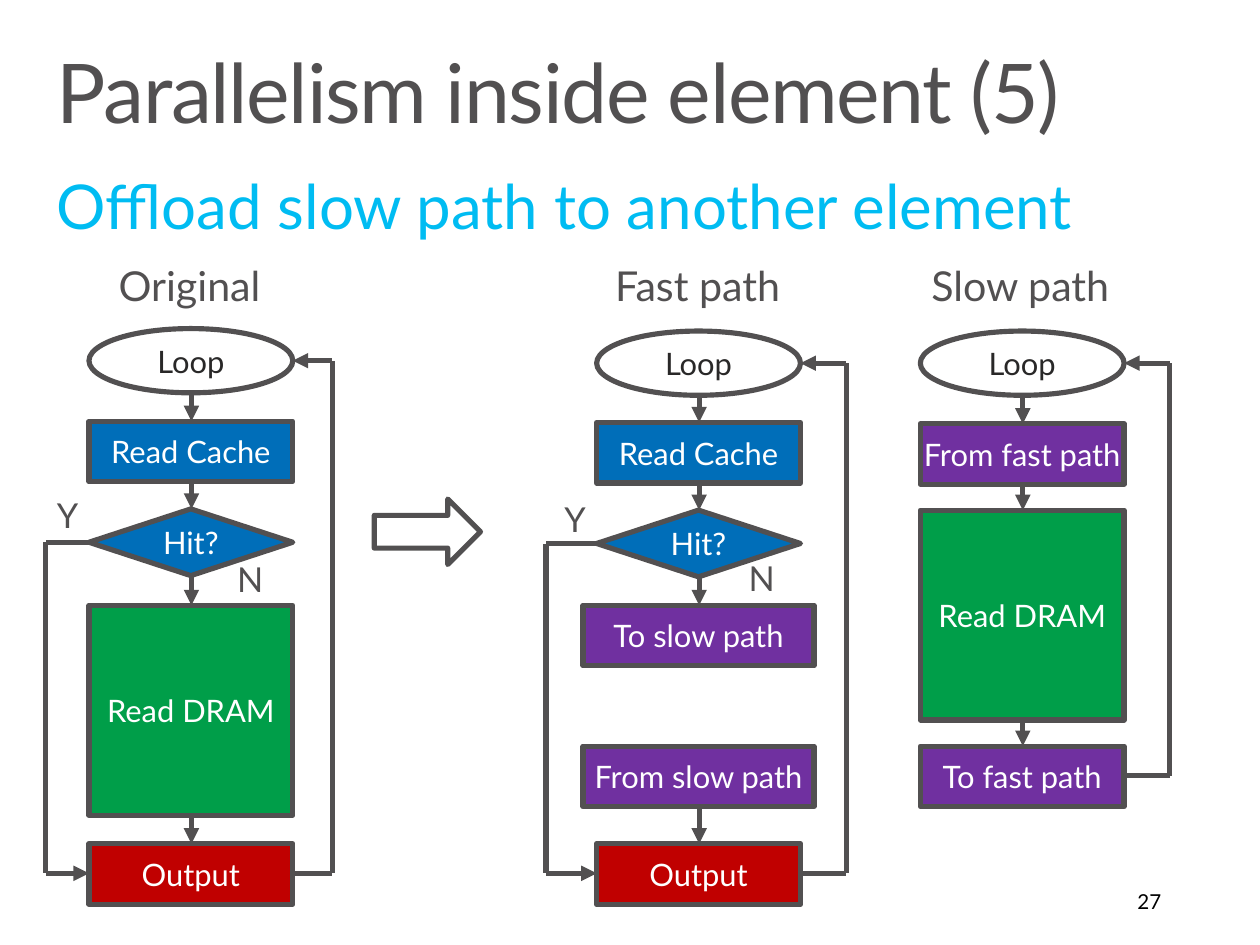
import dataclasses
import itertools

import lxml.etree
import pptx
import pptx.dml.color
import pptx.enum.shapes
import pptx.enum.text
import pptx.oxml.ns
import pptx.shapes.autoshape
import pptx.slide
import pptx.text.text
import pptx.util

EMU_PER_PX = 9144
FONT = "Lato"
GREY, CYAN, WHITE, BLACK = "525051", "00BCF2", "FFFFFF", "000000"
BLUE, GREEN, RED, PURPLE = "006EB9", "009E49", "C00000", "7030A0"
STEP_WIDTH, WIDE_STEP_WIDTH = 165, 187

Shape = pptx.enum.shapes.MSO_SHAPE
Align = pptx.enum.text.PP_ALIGN
Anchor = pptx.enum.text.MSO_ANCHOR
AutoSize = pptx.enum.text.MSO_AUTO_SIZE
Point = tuple[int, int]


@dataclasses.dataclass(frozen=True)
class Step:
    text: str
    top: int
    fill: str
    height: int = 49
    width: int = STEP_WIDTH
    outline: Shape = Shape.RECTANGLE
    color: str = WHITE
    linked: bool = True

    @property
    def middle(self) -> int:
        return self.top + self.height // 2


@dataclasses.dataclass(frozen=True)
class Flow:
    left: int
    return_x: int
    steps: list[Step]
    bypass_x: int | None = None


@dataclasses.dataclass(frozen=True)
class Label:
    text: str
    left: int
    top: int
    width: int
    height: int
    size: int


def loop(top: int) -> Step:
    return Step("Loop", top, WHITE, height=52, outline=Shape.OVAL, color="292828")


def hit(top: int) -> Step:
    return Step("Hit?", top, BLUE, height=54, outline=Shape.DIAMOND)


def dram(top: int) -> Step:
    return Step("Read DRAM", top, GREEN, height=170)


FLOWS = [
    Flow(72, 269, [
        loop(266),
        Step("Read Cache", 341, BLUE),
        hit(412),
        dram(490),
        Step("Output", 683, RED),
    ], bypass_x=37),
    Flow(483, 685, [
        loop(268),
        Step("Read Cache", 342, BLUE),
        hit(413),
        Step("To slow path", 490, PURPLE, width=WIDE_STEP_WIDTH, linked=False),
        Step("From slow path", 604, PURPLE, width=WIDE_STEP_WIDTH),
        Step("Output", 683, RED),
    ], bypass_x=442),
    Flow(745, 947, [
        loop(268),
        Step("From fast path", 343, PURPLE),
        dram(413),
        Step("To fast path", 604, PURPLE),
    ]),
]

LABELS = [
    Label("Original", 76, 199, 158, 69, 24),
    Label("Fast path", 478, 199, 175, 69, 24),
    Label("Slow path", 734, 199, 187, 69, 24),
    Label("Y", 26, 389, 56, 63, 20),
    Label("N", 172, 441, 61, 63, 20),
    Label("Y", 437, 392, 56, 63, 20),
    Label("N", 586, 440, 61, 63, 20),
]


def px(length: int) -> pptx.util.Emu:
    return pptx.util.Emu(length * EMU_PER_PX)


def rgb(color: str) -> pptx.dml.color.RGBColor:
    return pptx.dml.color.RGBColor.from_string(color)


def write_text(frame: pptx.text.text.TextFrame, text: str, *, size: int, color: str,
               align: Align = Align.LEFT, anchor: Anchor = Anchor.TOP,
               insets: Point = (10, 5), wrap: bool = True, auto_size: AutoSize = AutoSize.NONE,
               line_spacing: float = 1.0, before: int = 0, after: int = 0,
               tracking: int = 0) -> None:
    frame.auto_size = auto_size
    frame.word_wrap = wrap
    frame.vertical_anchor = anchor
    frame.margin_left = frame.margin_right = px(insets[0])
    frame.margin_top = frame.margin_bottom = px(insets[1])
    para = frame.paragraphs[0]
    para.alignment = align
    para.line_spacing = line_spacing
    para.space_before = pptx.util.Pt(before)
    para.space_after = pptx.util.Pt(after)
    span = para.add_run()
    span.text = text
    span.font.name = FONT
    span.font.size = pptx.util.Pt(size)
    span.font.color.rgb = rgb(color)
    if tracking:
        span.font._element.set("spc", str(tracking))


def place(shape: pptx.shapes.autoshape.Shape, left: int, top: int, width: int, height: int) -> None:
    shape.left, shape.top, shape.width, shape.height = map(px, (left, top, width, height))


def draw_shape(page: pptx.slide.Slide, outline: Shape, left: int, top: int, width: int,
               height: int, fill: str) -> pptx.shapes.autoshape.Shape:
    box = page.shapes.add_shape(outline, px(left), px(top), px(width), px(height))
    box.shadow.inherit = False
    box.fill.solid()
    box.fill.fore_color.rgb = rgb(fill)
    box.line.color.rgb = rgb(GREY)
    box.line.width = pptx.util.Pt(3)
    return box


def draw_route(page: pptx.slide.Slide, *points: Point) -> None:
    for start, end in itertools.pairwise(points):
        line = page.shapes.add_connector(
            pptx.enum.shapes.MSO_CONNECTOR.STRAIGHT, *map(px, start + end))
        line.line.color.rgb = rgb(GREY)
        line.line.width = pptx.util.Pt(3)
        properties = line.element.spPr
        if end == points[-1]:
            stroke = properties.find(pptx.oxml.ns.qn("a:ln"))
            lxml.etree.SubElement(stroke, pptx.oxml.ns.qn("a:tailEnd"), type="triangle")
        lxml.etree.SubElement(properties, pptx.oxml.ns.qn("a:effectLst"))


def draw_flow(page: pptx.slide.Slide, flow: Flow) -> None:
    for step in flow.steps:
        left = flow.left - (step.width - STEP_WIDTH) // 2
        box = draw_shape(page, step.outline, left, step.top, step.width, step.height, step.fill)
        write_text(box.text_frame, step.text, size=18, color=step.color, align=Align.CENTER,
                   anchor=Anchor.MIDDLE, insets=(0, 4))
    center = flow.left + (STEP_WIDTH + 1) // 2
    for upper, lower in itertools.pairwise(flow.steps):
        if upper.linked:
            draw_route(page, (center, upper.top + upper.height), (center, lower.top))
    right = flow.left + STEP_WIDTH
    first, last = flow.steps[0], flow.steps[-1]
    draw_route(page, (right, last.middle), (flow.return_x, last.middle),
               (flow.return_x, first.middle), (right, first.middle))
    if flow.bypass_x is not None:
        decision = flow.steps[2]
        draw_route(page, (flow.left, decision.middle), (flow.bypass_x, decision.middle),
                   (flow.bypass_x, last.middle), (flow.left, last.middle))


def draw_label(page: pptx.slide.Slide, label: Label) -> None:
    box = page.shapes.add_textbox(*map(px, (label.left, label.top, label.width, label.height)))
    write_text(box.text_frame, label.text, size=label.size, color=GREY, insets=(20, 16),
               wrap=False, auto_size=AutoSize.SHAPE_TO_FIT_TEXT, line_spacing=0.9, after=6)


def draw_headings(page: pptx.slide.Slide) -> None:
    title, body = page.shapes.title, page.placeholders[1]
    place(title, 30, 32, 960, 100)
    write_text(title.text_frame, "Parallelism inside element (5)", size=48, color=GREY,
               insets=(16, 10), line_spacing=0.9, tracking=-80)
    place(body, 30, 133, 960, 75)
    write_text(body.text_frame, "Offload slow path to another element", size=36, color=CYAN,
               insets=(16, 10), line_spacing=0.9, before=7)
    bullet = body.text_frame.paragraphs[0]._p.get_or_add_pPr()
    bullet.set("marL", "0")
    bullet.set("indent", "0")
    lxml.etree.SubElement(bullet, pptx.oxml.ns.qn("a:buNone"))


def main() -> None:
    deck = pptx.Presentation()
    deck.slide_width, deck.slide_height = px(1020), px(765)
    page = deck.slides.add_slide(deck.slide_layouts[1])
    draw_headings(page)
    for flow in FLOWS:
        draw_flow(page, flow)
    draw_shape(page, Shape.RIGHT_ARROW, 303, 404, 86, 53, WHITE)
    for label in LABELS:
        draw_label(page, label)
    number = page.shapes.add_textbox(px(720), px(709), px(230), px(41))
    write_text(number.text_frame, "27", size=12, color=BLACK, align=Align.RIGHT,
               anchor=Anchor.MIDDLE)
    deck.save("out.pptx")


if __name__ == "__main__":
    main()
